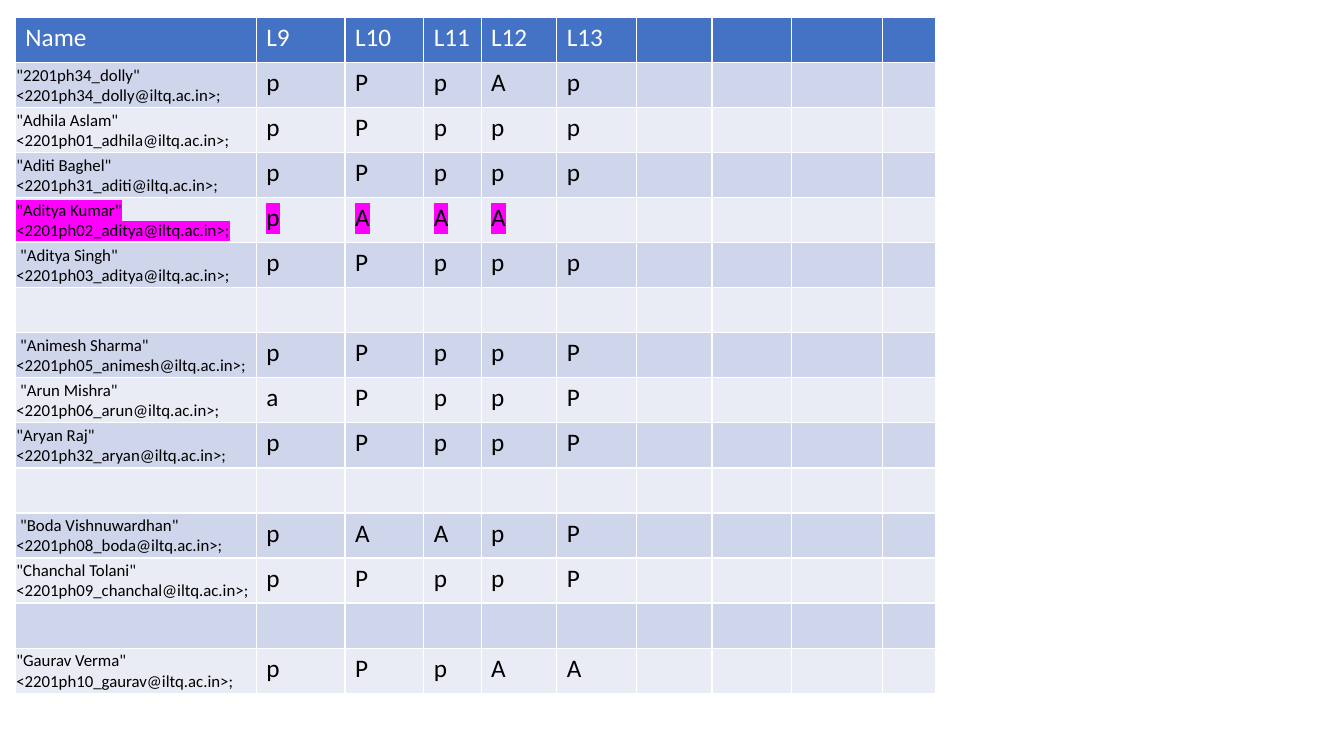
from lxml.etree import SubElement
from pptx import Presentation
from pptx.dml.color import RGBColor
from pptx.enum.text import MSO_ANCHOR as Anchor
from pptx.oxml.ns import qn
from pptx.util import Pt

FONT = "Calibri"
BLUE, WHITE, BLACK, MAGENTA = "4472C4", "FFFFFF", "000000", "FF00FF"
BANDS = ("CFD5EA", "E9EBF5")
LECTURES = ("L9", "L10", "L11", "L12", "L13")
COLUMN_WIDTHS = (172.1, 63.4, 56.2, 41, 54, 56.9, 54, 56.9, 64.8, 38.2)
NO_STUDENT = ("", "", "")
STUDENTS = (
    ('"2201ph34_dolly"', "2201ph34_dolly", "pPpAp"),
    ('"Adhila Aslam"', "2201ph01_adhila", "pPppp"),
    ('"Aditi Baghel"', "2201ph31_aditi", "pPppp"),
    ('"Aditya Kumar"', "2201ph02_aditya", "pAAA"),
    (' "Aditya Singh"', "2201ph03_aditya", "pPppp"),
    NO_STUDENT,
    (' "Animesh Sharma"', "2201ph05_animesh", "pPppP"),
    (' "Arun Mishra"', "2201ph06_arun", "aPppP"),
    ('"Aryan Raj"', "2201ph32_aryan", "pPppP"),
    NO_STUDENT,
    (' "Boda Vishnuwardhan"', "2201ph08_boda", "pAApP"),
    ('"Chanchal Tolani"', "2201ph09_chanchal", "pPppP"),
    NO_STUDENT,
    ('"Gaurav Verma"', "2201ph10_gaurav", "pPpAA"),
)
FLAGGED = "2201ph02_aditya"


def rgb(hex_color):
    return RGBColor.from_string(hex_color)


def write(cell, text, color, size=18, highlight=None):
    paragraph = cell.text_frame.paragraphs[0]
    font = paragraph.font
    font.name, font.size, font.bold = FONT, Pt(size), False
    font.color.rgb = rgb(color)
    if not text:
        return
    run = paragraph.add_run()
    run.text = text
    if highlight:
        mark = SubElement(run._r.get_or_add_rPr(), qn("a:highlight"))
        SubElement(mark, qn("a:srgbClr"), val=highlight)


def write_student(cell, name, account, highlight):
    cell.vertical_anchor = Anchor.MIDDLE
    cell.margin_left = cell.margin_top = cell.margin_right = Pt(0.72)
    cell.margin_bottom = 0
    write(cell, f"{name} <{account}@iltq.ac.in>;", BLACK, 12, highlight)


def add_attendance(slide, left, top, width, height):
    row_count = len(STUDENTS) + 1
    attendance = slide.shapes.add_table(
        row_count, len(COLUMN_WIDTHS), Pt(left), Pt(top), Pt(width), Pt(height)
    ).table
    for column, share in zip(attendance.columns, COLUMN_WIDTHS):
        column.width = Pt(width * share / sum(COLUMN_WIDTHS))
    for index, row in enumerate(attendance.rows):
        row.height = Pt(height / row_count)
        for cell in row.cells:
            cell.fill.solid()
            cell.fill.fore_color.rgb = rgb(BANDS[(index - 1) % 2] if index else BLUE)

    for column, heading in enumerate(("Name", *LECTURES)):
        write(attendance.cell(0, column), heading, WHITE)
    for row, (name, account, marks) in enumerate(STUDENTS, 1):
        highlight = MAGENTA if account == FLAGGED else None
        if name:
            write_student(attendance.cell(row, 0), name, account, highlight)
        for column, mark in enumerate(marks, 1):
            write(attendance.cell(row, column), mark, BLACK, highlight=highlight)


def main():
    deck = Presentation()
    deck.slide_width, deck.slide_height = Pt(960), Pt(540)
    slide = deck.slides.add_slide(deck.slide_layouts[6])
    add_attendance(slide, 11, 12.5, 657.5, 483)
    deck.save("out.pptx")


if __name__ == "__main__":
    main()
